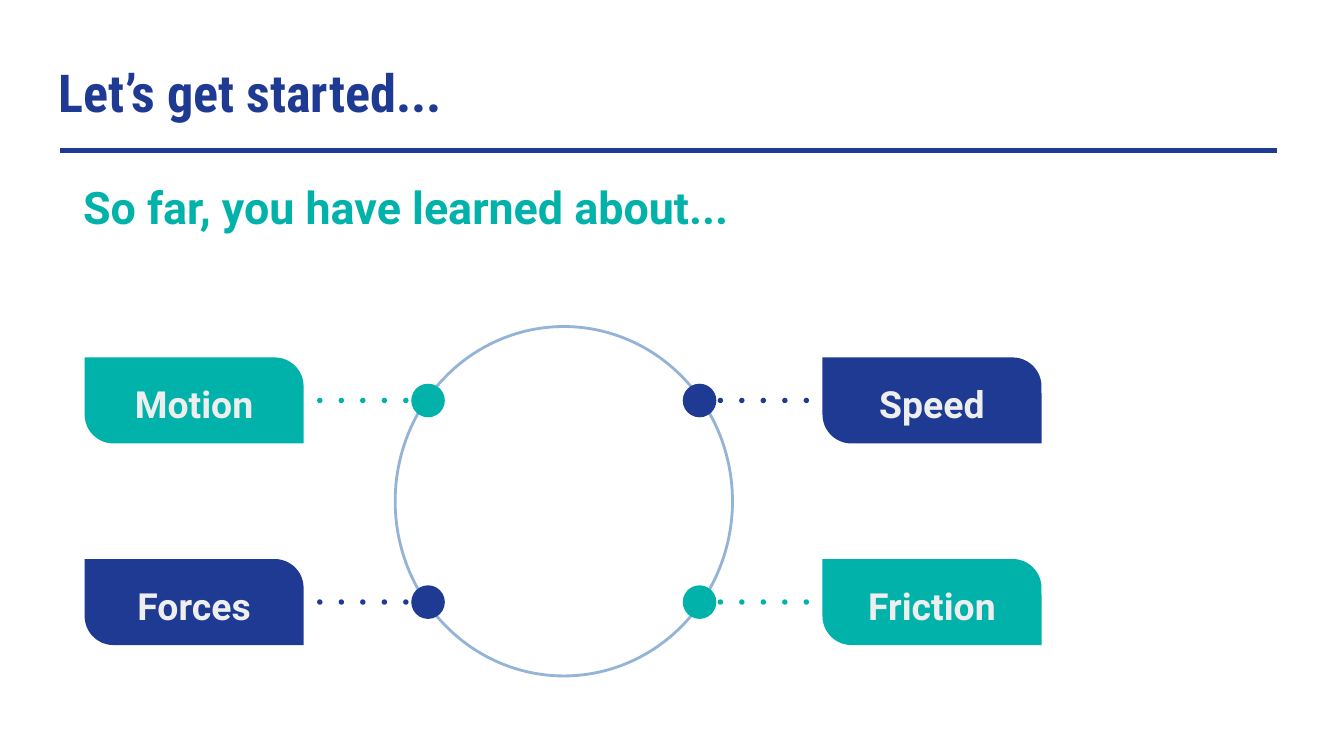
from typing import NamedTuple

from pptx import Presentation
from pptx.dml.color import RGBColor
from pptx.enum.shapes import MSO_CONNECTOR, MSO_SHAPE as Preset
from pptx.enum.text import MSO_ANCHOR as Anchor, PP_ALIGN as Align
from pptx.oxml.ns import qn
from pptx.util import Inches, Pt
from lxml.etree import SubElement

SLIDE_WIDTH = Inches(10)
SLIDE_HEIGHT = SLIDE_WIDTH * 9 // 16

NAVY, TEAL, PALE_BLUE, OFF_WHITE = "1F3A93", "00B2A9", "93B3D7", "EEEEEE"
LABEL_SIZE = (1.63, 0.64)
LABEL_INSET = 0.05
KNOB_SIZE = 0.25
DOT_SIZE, DOT_GAP, DOT_COUNT = 0.04, 0.16, 6


class Side(NamedTuple):
    label_left: float
    dots_left: float
    knob_left: float


class Topic(NamedTuple):
    name: str
    color: str
    side: Side
    center: float


LEFT = Side(label_left=0.63, dots_left=2.36, knob_left=3.06)
RIGHT = Side(label_left=6.12, dots_left=5.18, knob_left=5.08)
UPPER, LOWER = 2.98, 4.48

TOPICS = [
    Topic("Speed", NAVY, RIGHT, UPPER),
    Topic("Friction", TEAL, RIGHT, LOWER),
    Topic("Motion", TEAL, LEFT, UPPER),
    Topic("Forces", NAVY, LEFT, LOWER),
]

TITLE_FONT = {"name": "Roboto Condensed", "size": Pt(28), "bold": True}
SUBTITLE_FONT = {"name": "Roboto", "size": Pt(24), "bold": True}
LABEL_FONT = {"name": "Roboto", "size": Pt(20), "bold": True}
LABEL_PARAGRAPH = {"alignment": Align.CENTER, "line_spacing": 1.15}


def rgb(color: str) -> RGBColor:
    return RGBColor.from_string(color)


def set_values(target, values: dict) -> None:
    for name, value in values.items():
        setattr(target, name, value)


def add_filled(slide, preset, left: float, top: float, width: float, height: float, color: str):
    shape = slide.shapes.add_shape(preset, *map(Inches, (left, top, width, height)))
    shape.shadow.inherit = False
    shape.fill.solid()
    shape.fill.fore_color.rgb = rgb(color)
    shape.line.fill.background()
    return shape


def add_text(slide, text: str, box: tuple, font: dict, color: str,
             paragraph_format: dict | None = None, anchor=Anchor.TOP) -> None:
    frame = slide.shapes.add_textbox(*map(Inches, box)).text_frame
    margins = ("margin_left", "margin_top", "margin_right", "margin_bottom")
    set_values(frame, dict.fromkeys(margins, Inches(0.1)))
    set_values(frame, {"word_wrap": True, "vertical_anchor": anchor})
    paragraph = frame.paragraphs[0]
    set_values(paragraph, paragraph_format or {})
    run = paragraph.add_run()
    run.text = text
    set_values(run.font, font)
    run.font.color.rgb = rgb(color)


def add_title_rule(slide) -> None:
    rule = slide.shapes.add_connector(
        MSO_CONNECTOR.STRAIGHT, Inches(0.45), Inches(1.12), Inches(9.5), Inches(1.12))
    rule.line.color.rgb = rgb(NAVY)
    rule.line.width = Pt(2.25)
    SubElement(rule._element.spPr, qn("a:effectLst"))


def add_ring(slide) -> None:
    ring = slide.shapes.add_shape(Preset.OVAL, *map(Inches, (2.94, 2.43, 2.51, 2.6)))
    ring.shadow.inherit = False
    ring.fill.background()
    ring.line.color.rgb = rgb(PALE_BLUE)
    ring.line.width = Pt(1.5)


def add_dots(slide, topic: Topic) -> None:
    for index in range(DOT_COUNT):
        add_filled(slide, Preset.OVAL, topic.side.dots_left + index * DOT_GAP,
                   topic.center - DOT_SIZE / 2, DOT_SIZE, DOT_SIZE, topic.color)


def add_knob(slide, topic: Topic) -> None:
    add_filled(slide, Preset.OVAL, topic.side.knob_left, topic.center - KNOB_SIZE / 2,
               KNOB_SIZE, KNOB_SIZE, topic.color)


def add_label(slide, topic: Topic) -> None:
    width, height = LABEL_SIZE
    left, top = topic.side.label_left, topic.center - height / 2
    label = add_filled(slide, Preset.ROUND_2_DIAG_RECTANGLE, left, top, width, height, topic.color)
    label.adjustments[0] = 0
    label.adjustments[1] = 0.336
    box = (left + LABEL_INSET, top + LABEL_INSET,
           width - 2 * LABEL_INSET, height - 2 * LABEL_INSET)
    add_text(slide, topic.name, box, LABEL_FONT, OFF_WHITE, LABEL_PARAGRAPH, Anchor.MIDDLE)


def main() -> None:
    presentation = Presentation()
    presentation.slide_width, presentation.slide_height = SLIDE_WIDTH, SLIDE_HEIGHT
    slide = presentation.slides.add_slide(presentation.slide_layouts[6])

    add_text(slide, "Let’s get started...", (0.34, 0.35, 9.32, 0.63), TITLE_FONT, NAVY)
    add_title_rule(slide)
    add_text(slide, "So far, you have learned about...", (0.52, 1.24, 5.39, 0.63),
             SUBTITLE_FONT, TEAL)
    add_ring(slide)
    for add_part in (add_dots, add_knob, add_label):
        for topic in TOPICS:
            add_part(slide, topic)

    presentation.save("out.pptx")


if __name__ == "__main__":
    main()
